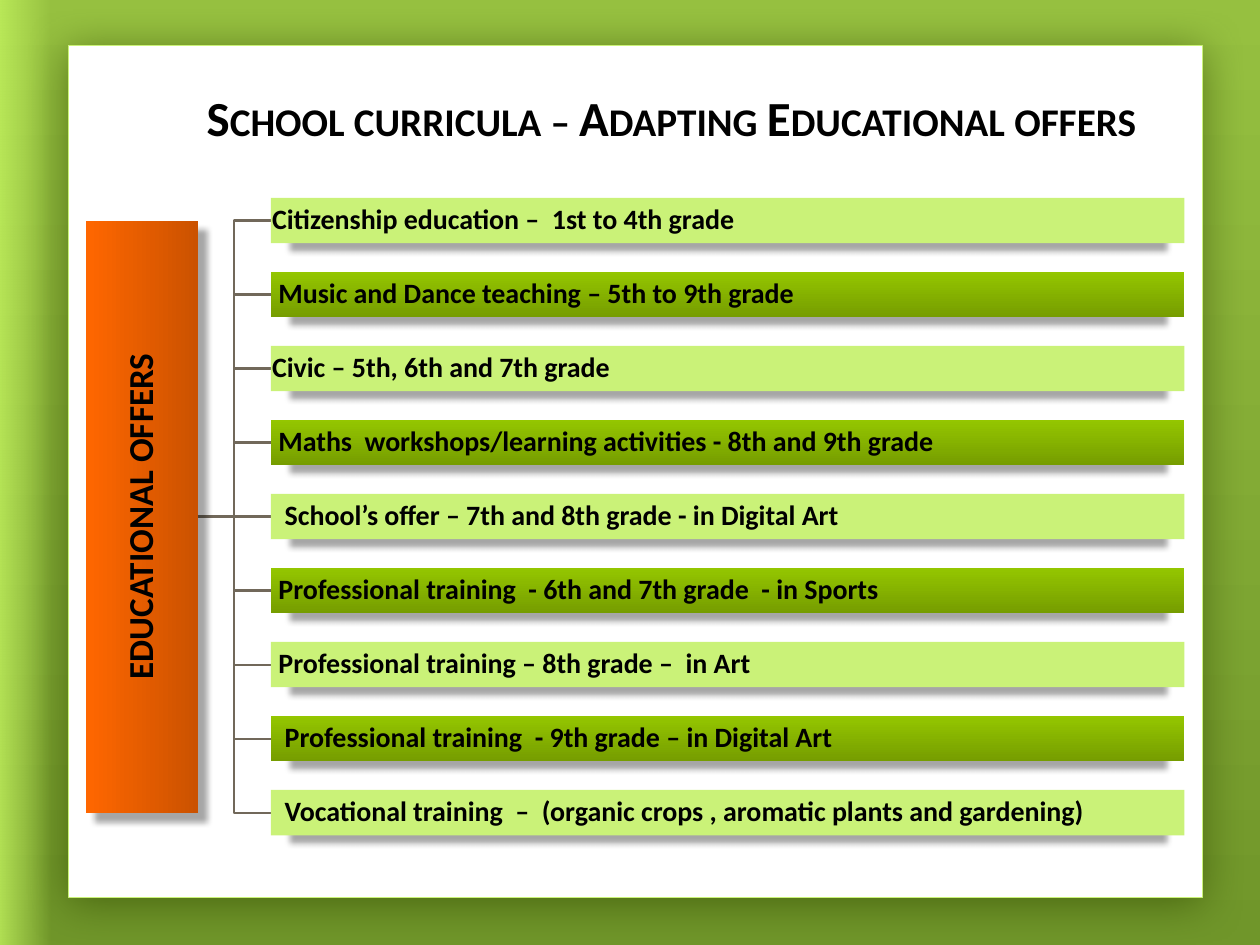
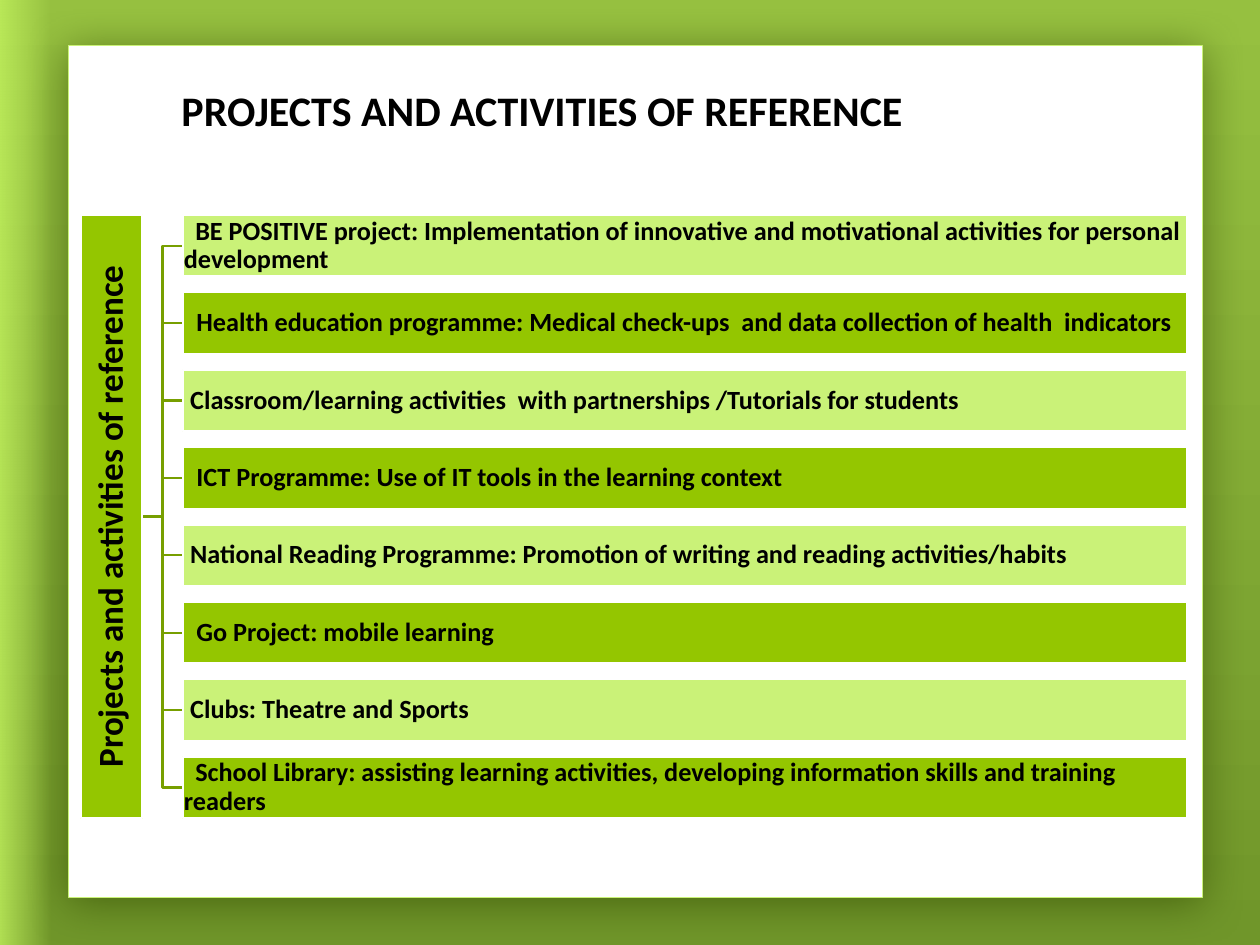
from dataclasses import dataclass

import pptx
import pptx.dml.color
import pptx.enum.shapes
import pptx.enum.text
import pptx.oxml.ns
import pptx.util
from lxml import etree

Inches = pptx.util.Inches
Pt = pptx.util.Pt
qn = pptx.oxml.ns.qn
SHAPE = pptx.enum.shapes.MSO_SHAPE
CONNECTOR = pptx.enum.shapes.MSO_CONNECTOR
ALIGN = pptx.enum.text.PP_ALIGN
ANCHOR = pptx.enum.text.MSO_ANCHOR

# Content: each bar is (first-line indent in inches, text)
SLIDES = [
    dict(
        title="School curricula – Adapting Educational offers",
        title_at=(1.54, 0.6, 8.35, 0.61), title_size=28,
        label="EDUCATIONAL OFFERS", label_at=(0.68, 0.89, 4.7),
        label_fill=("FF6700", "CB5200"), bar_fills=("CAF278", ("94C600", "769D00")),
        bar_at=(2.15, 7.25, 0.36), bar_size=16, span=4.7,
        line="71685A", outline=None, shadow=True,
        bars=[
            (0, "Citizenship education –  1st to 4th grade"),
            (0.05, "Music and Dance teaching – 5th to 9th grade"),
            (0, "Civic – 5th, 6th and 7th grade"),
            (0.05, "Maths  workshops/learning activities - 8th and 9th grade"),
            (0.1, "School’s offer – 7th and 8th grade - in Digital Art"),
            (0.05, "Professional training  - 6th and 7th grade  - in Sports"),
            (0.05, "Professional training – 8th grade –  in Art"),
            (0.1, "Professional training  - 9th grade – in Digital Art"),
            (0.1, "Vocational training  –  (organic crops , aromatic plants and gardening)"),
        ],
    ),
    dict(
        title="projects and activities of reference",
        title_at=(1.34, 0.29, 8.5, 0.85), title_size=30,
        label="Projects and activities of reference", label_at=(0.64, 0.49, 4.79),
        label_fill="94C600", bar_fills=("CAF278", "94C600"),
        bar_at=(1.45, 7.97, 0.49), bar_size=15, span=4.3,
        line="779F00", outline="FFFFFF", shadow=False,
        bars=[
            (0.09, "BE POSITIVE project: Implementation of innovative and "
                   "motivational activities for personal development"),
            (0.1, "Health education programme: Medical check-ups  and data "
                  "collection of health  indicators"),
            (0.05, "Classroom/learning activities  with partnerships /Tutorials for students"),
            (0.1, "ICT Programme: Use of IT tools in the learning context"),
            (0.05, "National Reading Programme: Promotion of writing and reading activities/habits"),
            (0.1, "Go Project: mobile learning"),
            (0.05, "Clubs: Theatre and Sports"),
            (0.09, "School Library: assisting learning activities, developing "
                   "information skills and training readers"),
        ],
    ),
]


@dataclass(frozen=True)
class Theme:
    font: str = "Calibri"
    text: str = "000000"
    panel: str = "FFFFFF"
    panel_line: str = "CAF278"
    panel_shadow: str = "304800"
    back: tuple = ("96C040", "70962A")
    glow: str = "C3F35F"
    label_size: int = 20
    line_width: float = 1.25


THEME = Theme()
PANEL = (0.54, 0.36, 9, 6.76)
MIDDLE = 4.1  # height at which label and bars are centred


def rgb(value):
    return pptx.dml.color.RGBColor.from_string(value)


def set_fill(fill, colour, angle=270):
    """Fill with one colour, or with a gradient when given a pair."""
    if isinstance(colour, str):
        fill.solid()
        fill.fore_color.rgb = rgb(colour)
        return
    fill.gradient()
    fill.gradient_angle = angle
    for stop, value in zip(fill.gradient_stops, colour):
        stop.color.rgb = rgb(value)


def add_alpha(clr, percent):
    etree.SubElement(clr, qn("a:alpha")).set("val", str(percent * 1000))


def add_shadow(sp, colour, alpha, blur, dist, angle=90, scale=100):
    effects = sp.element.spPr.find(qn("a:effectLst"))
    shadow = etree.SubElement(
        effects, qn("a:outerShdw"), blurRad=str(Pt(blur)), dist=str(Pt(dist)),
        dir=str(angle * 60000), sx=str(scale * 1000), algn="ctr", rotWithShape="0")
    add_alpha(etree.SubElement(shadow, qn("a:srgbClr"), val=colour), alpha)


def add_box(s, at, fill, line=None, width=THEME.line_width, angle=270):
    sp = s.shapes.add_shape(SHAPE.RECTANGLE, *map(Inches, at))
    sp.shadow.inherit = False
    set_fill(sp.fill, fill, angle)
    if line:
        sp.line.color.rgb = rgb(line)
        sp.line.width = Pt(width)
    else:
        sp.line.fill.background()
    return sp


def set_text(sp, text, size, align=ALIGN.LEFT, anchor=ANCHOR.MIDDLE,
             inset=0.01, spacing=0.9, indent=0, small_caps=False):
    tf = sp.text_frame
    tf.word_wrap = True
    tf.auto_size = pptx.enum.text.MSO_AUTO_SIZE.NONE
    tf.vertical_anchor = anchor
    tf.margin_left = tf.margin_right = Inches(inset)
    tf.margin_top = tf.margin_bottom = Inches(min(inset, 0.05))
    p = tf.paragraphs[0]
    p.alignment = align
    p.line_spacing = spacing
    if indent:
        pPr = p._p.get_or_add_pPr()
        pPr.set("marL", "0")
        pPr.set("indent", str(Inches(indent)))
    r = p.add_run()
    r.text = text
    r.font.name = THEME.font
    r.font.size = Pt(size)
    r.font.bold = True
    r.font.color.rgb = rgb(THEME.text)
    if small_caps:
        r._r.get_or_add_rPr().set("cap", "small")


def add_frame(s):
    """Bright left edge and the white panel with its soft shadow."""
    glow = add_box(s, (0, 0, 0.4, 7.5), (THEME.glow, THEME.glow), angle=0)
    for clr, percent in zip(list(glow.element.iter(qn("a:srgbClr"))), (80, 0)):
        add_alpha(clr, percent)
    panel = add_box(s, PANEL, THEME.panel, THEME.panel_line, 0.5)
    add_shadow(panel, THEME.panel_shadow, 60, 25, 3)


def add_link(s, x1, x2, y, colour):
    kind = CONNECTOR.STRAIGHT if abs(y - MIDDLE) < 0.01 else CONNECTOR.ELBOW
    link = s.shapes.add_connector(kind, *map(Inches, (x1, MIDDLE, x2, y)))
    link.line.color.rgb = rgb(colour)
    link.line.width = Pt(THEME.line_width)
    etree.SubElement(link.element.spPr, qn("a:effectLst"))


def add_tree(s, d):
    """Upright label, linked to a column of evenly spaced bars."""
    label_left, label_width, label_height = d["label_at"]
    bar_left, bar_width, bar_height = d["bar_at"]
    pitch = d["span"] / (len(d["bars"]) - 1)
    centres = [MIDDLE - d["span"] / 2 + i * pitch for i in range(len(d["bars"]))]

    for y in centres:
        add_link(s, label_left + label_width, bar_left, y, d["line"])

    # The label is laid out flat, then turned about its centre
    x = label_left + (label_width - label_height) / 2
    label = add_box(s, (x, MIDDLE - label_width / 2, label_height, label_width),
                    d["label_fill"], d["outline"])
    label.rotation = 270
    set_text(label, d["label"], THEME.label_size, align=ALIGN.CENTER)
    if d["shadow"]:
        add_shadow(label, "000000", 34, 3.5, 7, angle=45)

    for i, (y, (indent, text)) in enumerate(zip(centres, d["bars"])):
        bar = add_box(s, (bar_left, y - bar_height / 2, bar_width, bar_height),
                      d["bar_fills"][i % 2], d["outline"])
        set_text(bar, text, d["bar_size"], indent=indent)
        if d["shadow"]:
            add_shadow(bar, "000000", 34, 3.5, 4, scale=96)


def add_title(s, d):
    title = s.shapes.title
    title.left, title.top, title.width, title.height = map(Inches, d["title_at"])
    set_text(title, d["title"], d["title_size"], anchor=ANCHOR.BOTTOM,
             inset=0.1, spacing=1.0, small_caps=True)
    title.element.getparent().append(title.element)  # bring above the panel


def main():
    prs = pptx.Presentation()
    prs.slide_width, prs.slide_height = Inches(10), Inches(7.5)
    set_fill(prs.slide_master.background.fill, THEME.back)
    for d in SLIDES:
        s = prs.slides.add_slide(prs.slide_layouts[5])
        add_frame(s)
        add_tree(s, d)
        add_title(s, d)
    prs.save("out.pptx")


if __name__ == "__main__":
    main()
